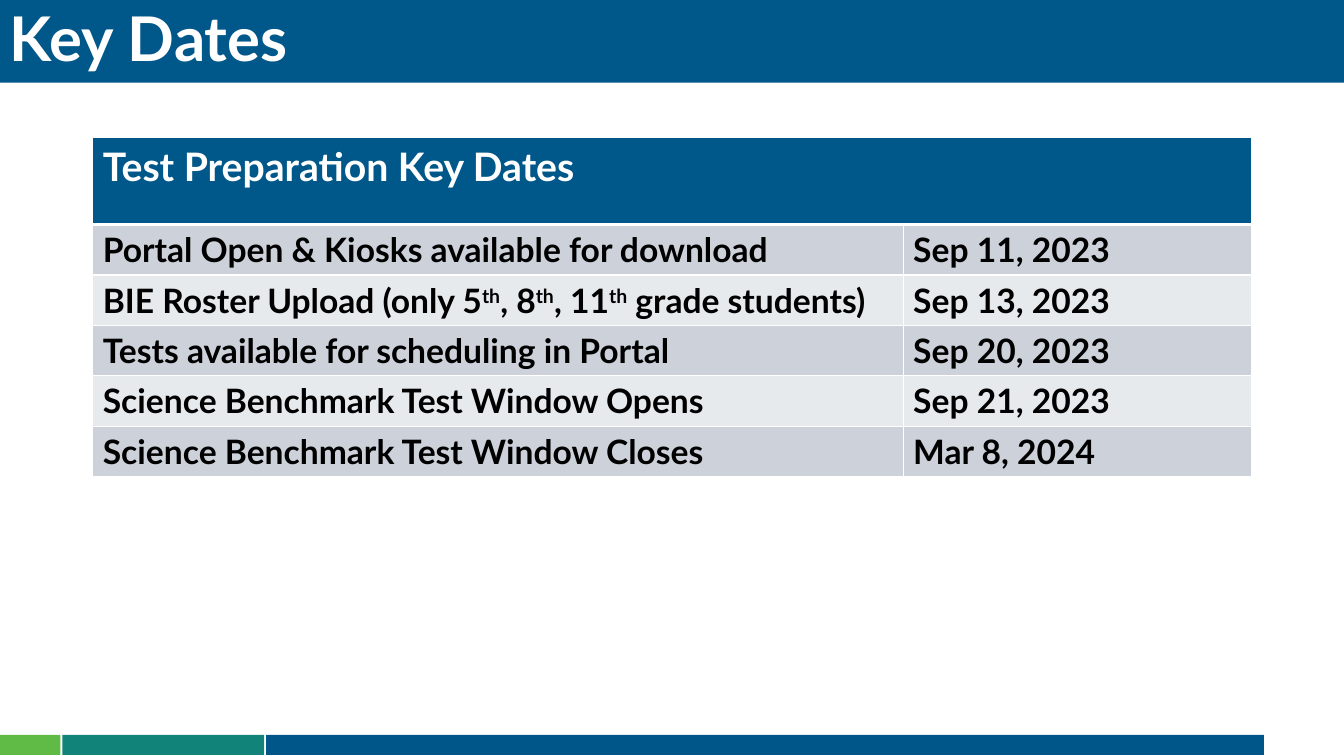
"""Build the Key Dates slide."""
from dataclasses import dataclass

from lxml import etree
from pptx import Presentation
from pptx.dml.color import RGBColor
from pptx.enum import shapes, text
from pptx.oxml.ns import qn
from pptx.util import Pt

TITLE = "Key Dates"
HEADING = "Test Preparation Key Dates"
DATES = [
    ("Portal Open & Kiosks available for download", "Sep 11, 2023"),
    ("BIE Roster Upload (only 5^th^, 8^th^, 11^th^ grade students)", "Sep 13, 2023"),
    ("Tests available for scheduling in Portal", "Sep 20, 2023"),
    ("Science Benchmark Test Window Opens", "Sep 21, 2023"),
    ("Science Benchmark Test Window Closes", "Mar 8, 2024"),
]


@dataclass(frozen=True)
class Theme:
    font: str = "Lato"
    white: str = "FFFFFF"
    black: str = "000000"
    navy: str = "005789"
    footer: tuple = (("60BB46", 43.2), ("128379", 144), ("005689", 712.8))
    bands: tuple = ("CCD1DA", "E7EAED")
    title_size: int = 44
    heading_size: int = 28
    body_size: int = 24


THEME = Theme()
WIDTH, HEIGHT = 960, 540
TITLE_HEIGHT = 59.04
FOOTER_TOP, FOOTER_HEIGHT, FOOTER_GAP = 524.88, 14.4, 1.44
TABLE_LEFT, TABLE_TOP = 66.24, 98.2
COLUMNS = (578.88, 249.12)
HEADING_HEIGHT, ROW_HEIGHT = 62.2, 36


def write(frame, content, size, color, spacing=None):
    """Write bold text, raising the parts between carets."""
    para = frame.paragraphs[0]
    para.alignment = text.PP_ALIGN.LEFT
    if spacing:
        para.line_spacing = spacing
    for index, part in enumerate(content.split("^")):
        span = para.add_run()
        span.text = part
        span.font.name = THEME.font
        span.font.size = Pt(size)
        span.font.bold = True
        span.font.color.rgb = RGBColor.from_string(color)
        if index % 2:
            span._r.get_or_add_rPr().set("baseline", "30000")


def add_bar(page, left, top, width, height, color):
    """Add a plain filled rectangle."""
    bar = page.shapes.add_shape(
        shapes.MSO_SHAPE.RECTANGLE, Pt(left), Pt(top), Pt(width), Pt(height))
    bar.shadow.inherit = False
    bar.fill.solid()
    bar.fill.fore_color.rgb = RGBColor.from_string(color)
    bar.line.fill.background()
    return bar


def style_cell(cell, color, bottom=1):
    """Fill a cell and give it white borders."""
    cell.fill.solid()
    cell.fill.fore_color.rgb = RGBColor.from_string(color)
    properties = cell._tc.get_or_add_tcPr()
    edges = (("lnL", 1), ("lnR", 1), ("lnT", 1), ("lnB", bottom))
    for index, (edge, weight) in enumerate(edges):
        line = etree.Element(qn(f"a:{edge}"), w=str(Pt(weight)))
        fill = etree.SubElement(line, qn("a:solidFill"))
        etree.SubElement(fill, qn("a:srgbClr"), val=THEME.white)
        properties.insert(index, line)


def add_dates(page):
    """Add the table of dates."""
    height = HEADING_HEIGHT + ROW_HEIGHT * len(DATES)
    table = page.shapes.add_table(
        len(DATES) + 1, len(COLUMNS), Pt(TABLE_LEFT), Pt(TABLE_TOP),
        Pt(sum(COLUMNS)), Pt(height)).table
    for column, width in zip(table.columns, COLUMNS):
        column.width = Pt(width)
    for index, row in enumerate(table.rows):
        row.height = Pt(ROW_HEIGHT if index else HEADING_HEIGHT)
    for cell in table.rows[0].cells:
        style_cell(cell, THEME.navy, bottom=3)
    heading = table.cell(0, 0)
    heading.merge(table.cell(0, len(COLUMNS) - 1))
    write(heading.text_frame, HEADING, THEME.heading_size, THEME.white)
    for index, entry in enumerate(DATES):
        for column, content in enumerate(entry):
            cell = table.cell(index + 1, column)
            style_cell(cell, THEME.bands[index % 2], bottom=1)
            write(cell.text_frame, content, THEME.body_size, THEME.black)


def main():
    """Assemble and save the deck."""
    deck = Presentation()
    deck.slide_width, deck.slide_height = Pt(WIDTH), Pt(HEIGHT)
    page = deck.slides.add_slide(deck.slide_layouts[6])
    left = 0
    for color, width in THEME.footer:
        add_bar(page, left, FOOTER_TOP, width, FOOTER_HEIGHT, color)
        left += width + FOOTER_GAP
    banner = add_bar(page, 0, 0, WIDTH, TITLE_HEIGHT, THEME.navy)
    banner.text_frame.word_wrap = True
    banner.text_frame.vertical_anchor = text.MSO_ANCHOR.MIDDLE
    write(banner.text_frame, TITLE, THEME.title_size, THEME.white, spacing=0.9)
    add_dates(page)
    deck.save("out.pptx")


if __name__ == "__main__":
    main()
